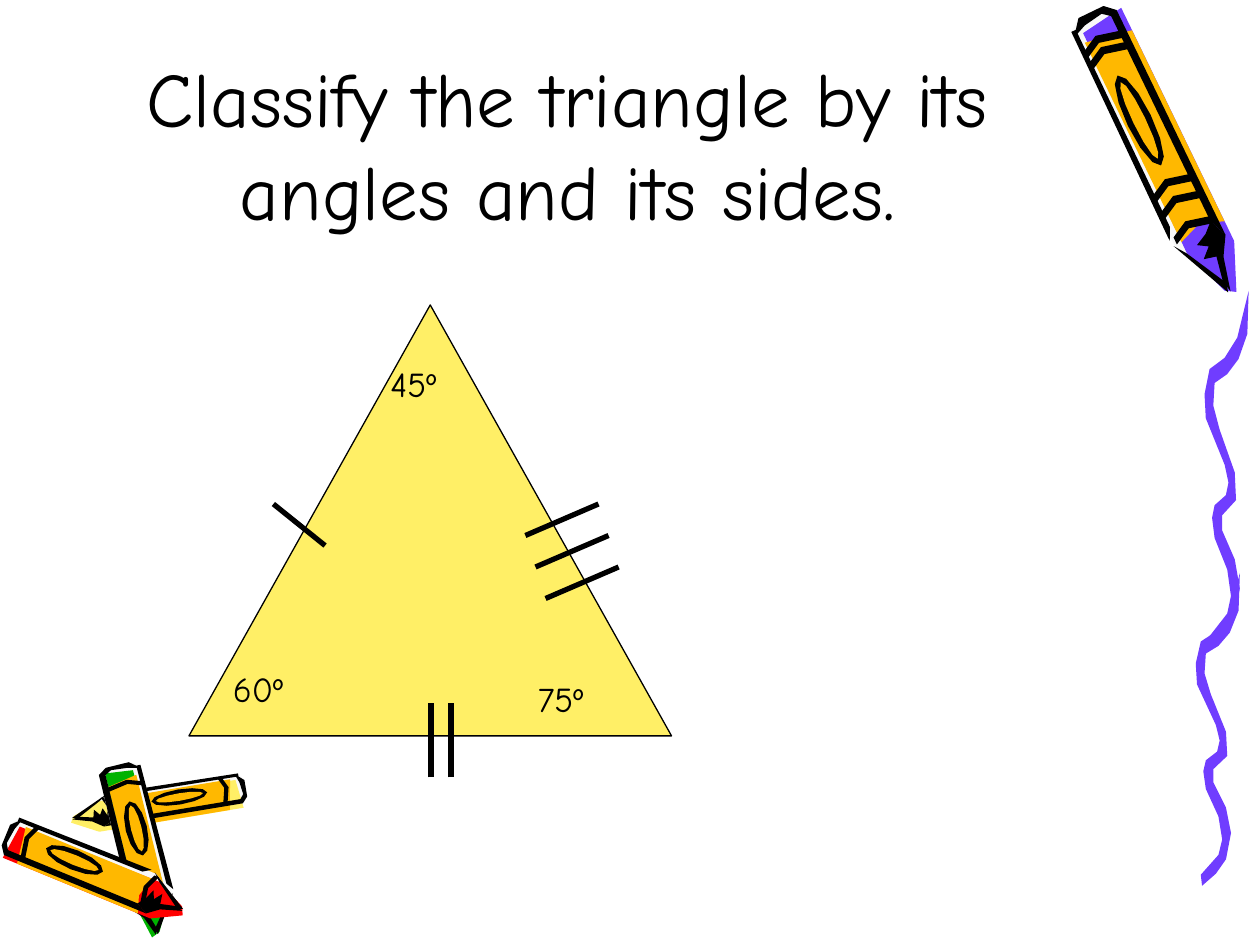
from collections import namedtuple
from math import cos, hypot, pi, sin

from lxml import etree
from pptx import Presentation
from pptx.dml.color import RGBColor
from pptx.enum.shapes import MSO_CONNECTOR, MSO_SHAPE
from pptx.enum.text import MSO_ANCHOR, PP_ALIGN
from pptx.oxml.ns import qn
from pptx.util import Inches, Pt

STRAIGHT = MSO_CONNECTOR.STRAIGHT
ISOSCELES = MSO_SHAPE.ISOSCELES_TRIANGLE
LEFT, CENTER = PP_ALIGN.LEFT, PP_ALIGN.CENTER
TOP, BOTTOM = MSO_ANCHOR.TOP, MSO_ANCHOR.BOTTOM

PURPLE = RGBColor(0x70, 0x3D, 0xFF)
ORANGE = RGBColor(0xFF, 0xB8, 0x00)
YELLOW = RGBColor(0xFF, 0xEF, 0x66)
RED = RGBColor(0xFF, 0x00, 0x00)
GREEN = RGBColor(0x00, 0xB2, 0x00)
PALE = RGBColor(0xF8, 0xF8, 0xF8)
BLACK = RGBColor(0x00, 0x00, 0x00)
FONT = "Comic Neue"

# The slide is a grid of 1000 columns by 750 rows.
COLUMNS, ROWS = 1000, 750
UNIT = Inches(0.01)

presentation = Presentation()
presentation.slide_width = COLUMNS * UNIT
presentation.slide_height = ROWS * UNIT
slide = presentation.slides.add_slide(presentation.slide_layouts[6])


def add_text(text, left, top, width, height, size=20, align=LEFT, anchor=TOP):
    box = slide.shapes.add_textbox(left * UNIT, top * UNIT, width * UNIT, height * UNIT)
    frame = box.text_frame
    frame.word_wrap = True
    frame.vertical_anchor = anchor
    paragraph = frame.paragraphs[0]
    paragraph.alignment = align
    run = paragraph.add_run()
    run.text = text
    run.font.name = FONT
    run.font.size = Pt(size)
    run.font.color.rgb = BLACK


def add_polygon(corners, colour):
    """Fill the closed outline through corners given as (column, row)."""
    points = [(round(column * UNIT), round(row * UNIT)) for column, row in corners]
    builder = slide.shapes.build_freeform(*points[0])
    builder.add_line_segments(points[1:], close=True)
    shape = builder.convert_to_shape()
    shape.shadow.inherit = False
    shape.fill.solid()
    shape.fill.fore_color.rgb = colour
    shape.line.fill.background()


# Every crayon has one design, in its own frame: the first number runs from
# 0 at the tail to 1 at the tip, the second from -1 to 1 across the width.
PAPER = [(0.03, -1), (0, -0.5), (0, 0.6), (0.03, 1), (0.83, 1), (1, 0.1), (0.8, -1)]
THIN_SIDE = [(0.03, -1), (0.77, -1.1), (0.73, -0.85), (0.03, -0.8)]
TAIL_AND_THICK_SIDE = [(0.05, -1), (0, -0.5), (0, 0.6), (0.03, 1), (0.83, 1),
                       (0.77, 0.7), (0.04, 0.7), (0.02, 0.4), (0.03, -0.4)]
THIN_POINT = [(0.79, -1.05), (1, 0.1), (0.97, 0.2), (0.83, -0.7)]
THICK_POINT = [(0.77, 0.7), (0.83, 1), (0.89, 0.55), (1, 0.2), (0.96, 0.1), (0.88, 0.3),
               (0.87, -0.2), (0.84, 0.2), (0.82, -0.2), (0.8, 0.3)]
BAND_ENDS = [(0, -0.9), (-0.03, -0.2), (-0.01, 0.8)]
BAND_THICKNESS = 0.025
OVAL_CENTRE, OVAL_LENGTH, OVAL_WIDTH = (0.38, -0.1), 0.16, 0.5
OVAL_STEPS = 12

# The wax and wrapper are printed off register, up to the share "edge" of the
# half width; "side" is 1 or -1 for the side that carries the thick line.
Crayon = namedtuple("Crayon", "tail tip half_width side edge wax bands")
LARGE_BANDS = (0.13, 0.17, 0.64, 0.7, 0.79)
SMALL_BANDS = (0.15, 0.82)
crayons = [
    Crayon((865, 10), (973, 233), 20, 1, 1.2, PURPLE, LARGE_BANDS),
    Crayon((195, 625), (57, 648), 12, 1, 1.3, YELLOW, SMALL_BANDS),
    Crayon((94, 607), (127, 741), 17, -1, 0.7, GREEN, SMALL_BANDS),
    Crayon((5, 662), (146, 720), 16, -1, 1.15, RED, SMALL_BANDS),
]

for crayon in crayons:
    edge = crayon.edge
    wax = [(0.05, -0.6), (0.03, edge), (0.86, edge), (1.01, 0.4), (0.99, 0), (0.83, -0.7)]
    wrapper = [(0.08, -0.7), (0.11, edge), (0.79, edge), (0.76, 0.3), (0.79, -0.7)]
    parts = [(PAPER, PALE), (wax, crayon.wax), (wrapper, ORANGE)]
    for outline in (THIN_SIDE, TAIL_AND_THICK_SIDE, THIN_POINT, THICK_POINT):
        parts.append((outline, BLACK))
    for position in crayon.bands:
        front = [(position + along, across) for along, across in BAND_ENDS]
        back = [(along - BAND_THICKNESS, across) for along, across in reversed(front)]
        parts.append((front + back, BLACK))
    for share_long, share_wide, colour in [(1, 1, BLACK), (0.85, 0.5, ORANGE)]:
        turns = [2 * pi * step / OVAL_STEPS for step in range(OVAL_STEPS)]
        oval = [(OVAL_CENTRE[0] + OVAL_LENGTH * share_long * cos(turn),
                 OVAL_CENTRE[1] + OVAL_WIDTH * share_wide * sin(turn)) for turn in turns]
        parts.append((oval, colour))

    # Turn the crayon's frame to the line from its tail to its tip.
    (tail_x, tail_y), (tip_x, tip_y) = crayon.tail, crayon.tip
    run_x, run_y = tip_x - tail_x, tip_y - tail_y
    reach = crayon.side * crayon.half_width / hypot(run_x, run_y)
    for outline, colour in parts:
        add_polygon([(tail_x + along * run_x + across * reach * run_y,
                      tail_y + along * run_y - across * reach * run_x)
                     for along, across in outline], colour)

# One wavy ribbon, drawn twice: full height above, squeezed below.
WAVE_HEIGHT = 284
WAVE_LEFT_EDGE_UP = [
    (4, 274), (18, 256), (21, 242), (18, 221), (8, 196), (6, 180), (8, 170), (17, 162),
    (19, 152), (16, 138), (1, 101), (0, 82), (4, 62), (16, 53), (26, 37), (35, 0)]
WAVE_RIGHT_EDGE_DOWN = [
    (34, 34), (27, 54), (18, 66), (8, 73), (7, 91), (12, 110), (24, 144), (25, 166),
    (14, 178), (14, 190), (24, 213), (28, 236), (24, 260), (16, 273), (5, 284)]
for left, top, height in [(949, 455, 248), (956, 231, WAVE_HEIGHT)]:
    add_polygon([(left + x, top + y * height / WAVE_HEIGHT)
                 for x, y in WAVE_LEFT_EDGE_UP + WAVE_RIGHT_EDGE_DOWN], PURPLE)

add_text("Classify the triangle by its angles and its sides.", 75, 17, 751, 175,
         size=44, align=CENTER, anchor=BOTTOM)

triangle = slide.shapes.add_shape(ISOSCELES, 150 * UNIT, 242 * UNIT, 383 * UNIT, 342 * UNIT)
triangle.shadow.inherit = False
triangle.fill.solid()
triangle.fill.fore_color.rgb = YELLOW
triangle.line.color.rgb = BLACK
triangle.line.width = Pt(0.75)

for angle, left, top in [("45º", 300, 283), ("60º", 175, 525), ("75º", 417, 533)]:
    add_text(angle, left, top, 108, 43)

# Tick marks: one on the left side, two on the base, three on the right side.
left_tick = [(217, 400, 258, 433)]
base_ticks = [(column, 617, column, 558) for column in (342, 358)]
right_ticks = [(417 + 8 * index, 425 + 25 * index, 475 + 8 * index, 400 + 25 * index)
               for index in range(3)]
for tick in left_tick + base_ticks + right_ticks:
    line = slide.shapes.add_connector(STRAIGHT, *[length * UNIT for length in tick])
    line.line.color.rgb = BLACK
    line.line.width = Pt(3)
    etree.SubElement(line._element.spPr, qn("a:effectLst"))

presentation.save("out.pptx")
